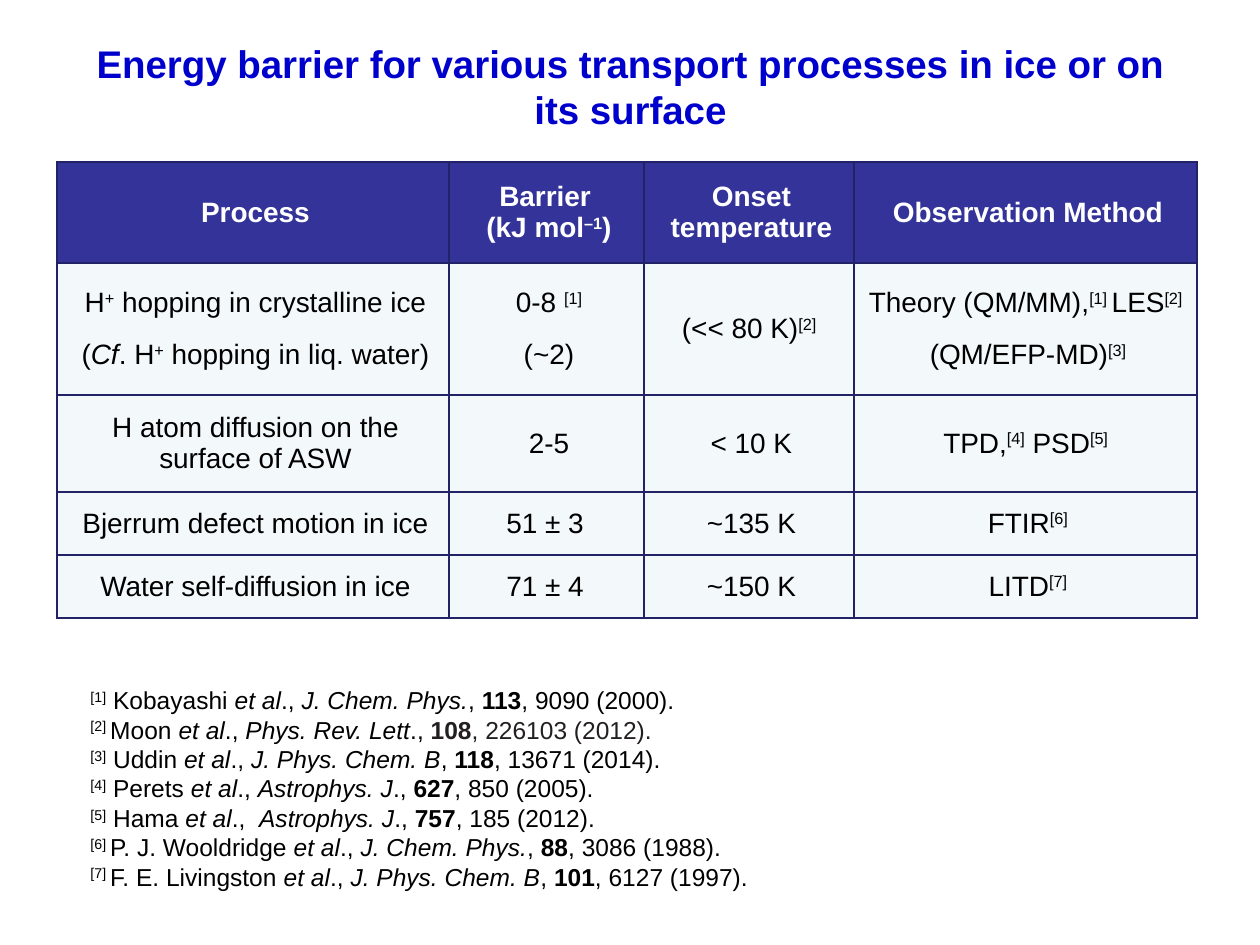
"""Build a slide tabulating energy barriers for transport processes in ice."""
from lxml import etree
from pptx import Presentation
from pptx import util as u
from pptx.dml.color import RGBColor
from pptx.enum import text
from pptx.oxml.ns import qn

TITLE = "Energy barrier for various transport processes in ice or on its surface"
ROWS = [
    ["Process", "Barrier \n(kJ mol^–1^)", "Onset temperature", "Observation Method"],
    ["H^+^ hopping in crystalline ice\n(*Cf*. H^+^ hopping in liq. water)",
     "0-8 ^[1]^\n(~2)", "(<< 80 K)^[2] ^",
     "Theory (QM/MM),^[1] ^LES^[2]  ^\n(QM/EFP-MD)^[3]^"],
    ["H atom diffusion on the surface of ASW", "2-5", "< 10 K", "TPD,^[4]^ PSD^[5] ^"],
    ["Bjerrum defect motion in ice", "51 ± 3 ", "~135 K", "FTIR^[6]^"],
    ["Water self-diffusion in ice", "71 ± 4 ", "~150 K", "LITD^[7]^"],
]
REFERENCES = [
    "^[1]^ Kobayashi *et al*., *J. Chem. Phys.*, |113|, 9090 (2000).",
    "^[2] ^Moon *et al*., *Phys. Rev. Lett*., ~|108|, 226103 (2012).~",
    "^[3]^ Uddin *et al*., *J. Phys. Chem. B*, |118|, 13671 (2014).",
    "^[4]^ Perets *et al*., *Astrophys. J*., |627|, 850 (2005).",
    "^[5]^ Hama *et al*.,  *Astrophys. J*., |757|, 185 (2012).",
    "^[6] ^P. J. Wooldridge *et al*., *J. Chem. Phys.*, |88|, 3086 (1988).",
    "^[7] ^F. E. Livingston *et al*., *J. Phys. Chem. B*, |101|, 6127 (1997).",
]
COL_WIDTHS = [392, 195, 210, 343]
ROW_HEIGHTS = [101, 132, 97, 63, 63]
FONT, NAVY, LINE, PALE = "Arial", "333399", "222267", "F3F9FA"
BLUE, WHITE, BLACK, SOFT_BLACK = "0000CC", "FFFFFF", "000000", "231F20"


def px(n):
    return u.Emu(round(n * 914400 / 126))


def color(value):
    return RGBColor.from_string(value)


def style(font, size, fill, bold=False):
    font.name, font.size, font.bold = FONT, u.Pt(size), bold
    font.color.rgb = color(fill)


def add_marked(p, marked, size, fill, bold=False):
    """Add runs, where ^ marks superscript, * italic, | bold and ~ soft black."""
    on, pieces = set(), [["", frozenset()]]
    for ch in marked:
        if ch in "^*|" or (ch == "~" and fill == BLACK and marked.endswith("~")):
            on ^= {ch}
            pieces.append(["", frozenset(on)])
        else:
            pieces[-1][0] += ch
    for words, marks in pieces:
        if words:
            r = p.add_run()
            r.text = words
            style(r.font, size, SOFT_BLACK if "~" in marks else fill, bold or "|" in marks)
            r.font.italic = "*" in marks
            if "^" in marks:
                r.font._element.set("baseline", "30000")


def set_borders(cell):
    tcPr = cell._tc.get_or_add_tcPr()
    for i, side in enumerate(("lnL", "lnR", "lnT", "lnB")):
        ln = etree.Element(qn("a:" + side), w=str(u.Pt(1)))
        fill = etree.SubElement(ln, qn("a:solidFill"))
        etree.SubElement(fill, qn("a:srgbClr"), val=LINE)
        tcPr.insert(i, ln)


def add_title(s):
    sp = s.shapes.title
    sp.left, sp.top, sp.width, sp.height = map(px, (78, 34, 1105, 106))
    tf = sp.text_frame
    tf.text = TITLE
    tf.vertical_anchor = text.MSO_ANCHOR.TOP
    tf.paragraphs[0].alignment = text.PP_ALIGN.CENTER
    style(tf.paragraphs[0].runs[0].font, 22, BLUE, True)


def add_barrier_table(s):
    tbl = s.shapes.add_table(len(ROWS), len(COL_WIDTHS), px(57), px(162),
                             px(sum(COL_WIDTHS)), px(sum(ROW_HEIGHTS))).table
    for col, width in zip(tbl.columns, COL_WIDTHS):
        col.width = px(width)
    for i, (row, height) in enumerate(zip(ROWS, ROW_HEIGHTS)):
        tbl.rows[i].height = px(height)
        for j, content in enumerate(row):
            cell = tbl.cell(i, j)
            cell.fill.solid()
            cell.fill.fore_color.rgb = color(PALE if i else NAVY)
            set_borders(cell)
            cell.vertical_anchor = text.MSO_ANCHOR.MIDDLE
            cell.margin_left = cell.margin_top = cell.margin_bottom = px(15)
            cell.margin_right = px(10)
            for k, line in enumerate(content.split("\n")):
                tf = cell.text_frame
                p = tf.add_paragraph() if k else tf.paragraphs[0]
                p.alignment = text.PP_ALIGN.CENTER
                if i and k:
                    p.space_before = u.Pt(12)
                add_marked(p, line, 16, BLACK if i else WHITE, not i)
    tbl.cell(1, 2).text_frame.paragraphs[0].space_after = u.Pt(25)


def add_references(s):
    tf = s.shapes.add_textbox(px(78), px(679), px(936), px(220)).text_frame
    tf.word_wrap = True
    for i, line in enumerate(REFERENCES):
        p = tf.add_paragraph() if i else tf.paragraphs[0]
        pPr = p._p.get_or_add_pPr()
        pPr.set("marL", str(px(63)))
        pPr.set("indent", str(-px(63)))
        add_marked(p, line, 14, BLACK)


def main():
    prs = Presentation()
    prs.slide_width, prs.slide_height = px(1260), px(945)
    s = prs.slides.add_slide(prs.slide_layouts[5])
    add_title(s)
    add_barrier_table(s)
    add_references(s)
    prs.save("out.pptx")


if __name__ == "__main__":
    main()
